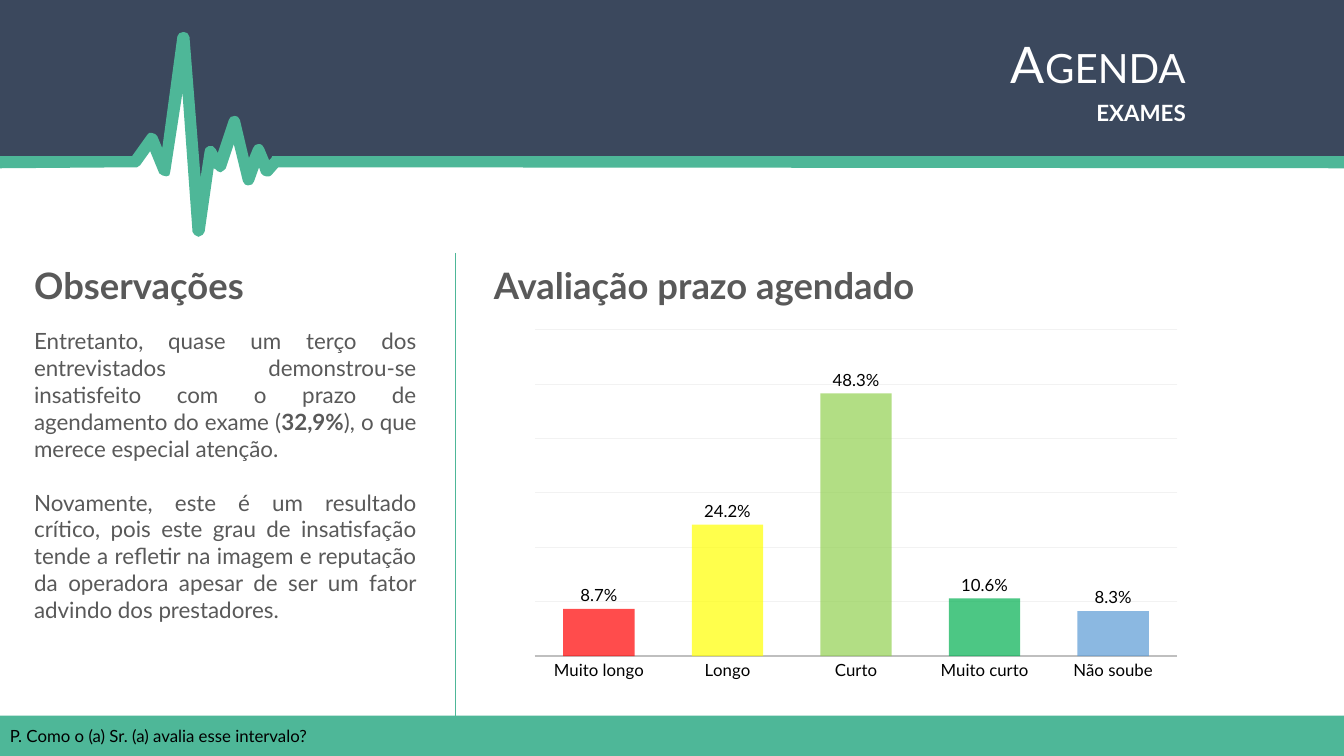
from dataclasses import dataclass

from lxml import etree
from pptx import Presentation
from pptx.chart.data import CategoryChartData
from pptx.dml.color import RGBColor
from pptx.enum.chart import XL_CHART_TYPE, XL_LABEL_POSITION, XL_TICK_MARK
from pptx.enum.dml import MSO_LINE
from pptx.enum.shapes import MSO_CONNECTOR, MSO_SHAPE
from pptx.enum.text import MSO_AUTO_SIZE, PP_ALIGN
from pptx.oxml.ns import qn
from pptx.shapes.autoshape import Shape
from pptx.slide import Slide
from pptx.util import Inches, Pt

COLUMN = XL_CHART_TYPE.COLUMN_CLUSTERED
OUTSIDE = XL_LABEL_POSITION.OUTSIDE_END
NO_TICK = XL_TICK_MARK.NONE
SOLID = MSO_LINE.SOLID
STRAIGHT = MSO_CONNECTOR.STRAIGHT
RECTANGLE = MSO_SHAPE.RECTANGLE
GROW = MSO_AUTO_SIZE.SHAPE_TO_FIT_TEXT
LEFT, RIGHT, JUSTIFY = PP_ALIGN.LEFT, PP_ALIGN.RIGHT, PP_ALIGN.JUSTIFY

NAVY = RGBColor(0x3B, 0x48, 0x5D)
GREEN = RGBColor(0x4E, 0xB7, 0x98)
WHITE = RGBColor(0xFF, 0xFF, 0xFF)
BLACK = RGBColor(0x00, 0x00, 0x00)
GREY = RGBColor(0x59, 0x59, 0x59)
AXIS_GREY = RGBColor(0xBF, 0xBF, 0xBF)
GRID_GREY = RGBColor(0xF2, 0xF2, 0xF2)
BAR_BLUE = RGBColor(0x5B, 0x9B, 0xD5)

FONT = "Lato"
SLIDE_WIDTH, SLIDE_HEIGHT = 13.33, 7.5

# Outline points in hundredths of an inch
HEADER_OUTLINE = [
    (1333, 0), (0, 0), (0, 161), (134, 160), (152, 141), (162, 167), (181, 74),
    (197, 204), (208, 155), (218, 165), (231, 126), (246, 176), (258, 153),
    (265, 169), (275, 160), (1333, 161),
]
PULSE_OUTLINE = [
    (1333, 155), (273, 155), (270, 155), (269, 157), (267, 159), (262, 147),
    (260, 144), (258, 143), (256, 143), (253, 144), (251, 147), (247, 157),
    (238, 119), (236, 116), (233, 115), (229, 116), (227, 119), (216, 152),
    (214, 148), (211, 145), (207, 145), (204, 147), (203, 150), (199, 176),
    (188, 37), (186, 33), (183, 32), (181, 32), (178, 33), (176, 36),
    (161, 147), (156, 135), (154, 133), (151, 132), (148, 132), (146, 134),
    (131, 155), (0, 155), (0, 167), (134, 166), (136, 166), (139, 164),
    (149, 150), (158, 172), (161, 174), (165, 175), (168, 174), (169, 170),
    (181, 92), (191, 230), (193, 233), (197, 235), (201, 233), (203, 230),
    (212, 167), (214, 168), (216, 170), (219, 171), (222, 169), (224, 167),
    (232, 143), (241, 180), (243, 183), (246, 184), (250, 183), (252, 180),
    (257, 166), (259, 172), (261, 174), (264, 175), (267, 175), (269, 174),
    (276, 166), (1333, 167),
]


@dataclass(frozen=True)
class Span:
    text: str
    size: int
    color: RGBColor
    bold: bool = False
    small_caps: bool = False


@dataclass(frozen=True)
class Para:
    spans: list[Span]
    align: PP_ALIGN = LEFT
    space_before: float = 0


@dataclass(frozen=True)
class TextBlock:
    left: float
    top: float
    width: float
    height: float
    paras: list[Para]


@dataclass(frozen=True)
class Bar:
    label: str
    value: float
    color: RGBColor


TEXT_BLOCKS = [
    TextBlock(2.46, 0.28, 9.4, 1.04, [
        Para([Span("Agenda", 36, WHITE, small_caps=True)], RIGHT),
        Para([Span("exames", 20, WHITE, True, True)], RIGHT),
    ]),
    TextBlock(0, 7.15, 9.56, 0.3, [
        Para([Span("P. Como o (a) Sr. (a) avalia esse intervalo?", 12, BLACK)]),
    ]),
    TextBlock(0.24, 2.56, 4.19, 0.54, [Para([Span("Observações", 26, GREY, True)])]),
    TextBlock(0.24, 3.2, 3.99, 2.79, [
        Para([
            Span("Entretanto, quase um terço dos entrevistados demonstrou-se "
                 "insatisfeito com o prazo de agendamento do exame (", 16, GREY),
            Span("32,9%", 16, GREY, True),
            Span("), o que merece especial atenção.", 16, GREY),
        ], JUSTIFY),
        Para([
            Span("Novamente, este é um resultado crítico, pois este grau de "
                 "insatisfação tende a refletir na imagem e reputação da operadora "
                 "apesar de ser um fator advindo dos prestadores.", 16, GREY),
        ], JUSTIFY, 19.2),
    ]),
    TextBlock(4.8, 2.56, 7.38, 0.54, [
        Para([Span("Avaliação prazo agendado", 26, GREY, True)]),
    ]),
]

BARS = [
    Bar("Muito longo", 0.087, RGBColor(0xFF, 0x00, 0x00)),
    Bar("Longo", 0.242, RGBColor(0xFF, 0xFF, 0x00)),
    Bar("Curto", 0.483, RGBColor(0x92, 0xD0, 0x50)),
    Bar("Muito curto", 0.106, RGBColor(0x00, 0xB0, 0x50)),
    Bar("Não soube", 0.083, BAR_BLUE),
]


def set_all(target: object, values: dict[str, object]) -> None:
    for name, value in values.items():
        setattr(target, name, value)


def fill_plain(shape: Shape, color: RGBColor) -> None:
    """Give a shape one solid colour, without line or shadow."""
    shape.shadow.inherit = False
    shape.fill.solid()
    shape.fill.fore_color.rgb = color
    shape.line.fill.background()


def add_outline(page: Slide, points: list[tuple[int, int]], color: RGBColor) -> None:
    builder = page.shapes.build_freeform(*points[0], scale=Inches(0.01))
    builder.add_line_segments(points[1:], close=True)
    fill_plain(builder.convert_to_shape(), color)


def add_text(page: Slide, block: TextBlock) -> None:
    box = page.shapes.add_textbox(
        Inches(block.left), Inches(block.top), Inches(block.width), Inches(block.height))
    frame = box.text_frame
    set_all(frame, {"word_wrap": True, "auto_size": GROW})
    for index, para in enumerate(block.paras):
        paragraph = frame.add_paragraph() if index else frame.paragraphs[0]
        paragraph.alignment = para.align
        if para.space_before:
            paragraph.space_before = Pt(para.space_before)
        for span in para.spans:
            run = paragraph.add_run()
            run.text = span.text
            set_all(run.font, {"name": FONT, "size": Pt(span.size), "bold": span.bold})
            run.font.color.rgb = span.color
            if span.small_caps:
                run.font._element.set("cap", "small")


def add_divider(page: Slide) -> None:
    line = page.shapes.add_connector(
        STRAIGHT, Inches(4.52), Inches(2.51), Inches(4.52), Inches(7.19))
    line.line.color.rgb = GREEN
    line.line.width = Pt(1)
    etree.SubElement(line._element.spPr, qn("a:effectLst"))


def add_rating_chart(page: Slide) -> None:
    data = CategoryChartData(number_format="0.0%")
    data.categories = [bar.label for bar in BARS]
    data.add_series("Series 1", [bar.value for bar in BARS])
    chart = page.shapes.add_chart(
        COLUMN, Inches(5.17), Inches(3.2), Inches(6.64), Inches(3.62), data).chart
    set_all(chart, {"has_legend": False, "has_title": False})
    plot = chart.plots[0]
    set_all(plot, {"gap_width": 80, "overlap": 25, "vary_by_categories": False,
                   "has_data_labels": True})
    labels = plot.data_labels
    set_all(labels, {"show_value": True, "number_format": "0.0%",
                     "number_format_is_linked": False, "position": OUTSIDE})

    categories, values = chart.category_axis, chart.value_axis
    set_all(categories, {"major_tick_mark": NO_TICK, "minor_tick_mark": NO_TICK})
    set_all(values, {"visible": False, "has_major_gridlines": True,
                     "minimum_scale": 0, "maximum_scale": 0.6, "major_unit": 0.1})
    set_all(values.tick_labels, {"number_format": "0.0%", "number_format_is_linked": False})
    for line, color, width in ((categories.format.line, AXIS_GREY, 1.25),
                               (values.major_gridlines.format.line, GRID_GREY, 0.75)):
        line.color.rgb = color
        set_all(line, {"width": Pt(width), "dash_style": SOLID})
    for font, size in ((chart.font, 10), (categories.tick_labels.font, 12), (labels.font, 12)):
        set_all(font, {"name": FONT, "size": Pt(size)})
        font.color.rgb = BLACK

    series = plot.series[0]
    fills = [series.format.fill] + [series.points[i].format.fill for i in range(len(BARS))]
    for fill, color in zip(fills, [BAR_BLUE] + [bar.color for bar in BARS]):
        fill.solid()
        fill.fore_color.rgb = color
    for color in list(series._element.iter(qn("a:srgbClr"))):
        etree.SubElement(color, qn("a:alpha"), val="70000")


def main() -> None:
    deck = Presentation()
    set_all(deck, {"slide_width": Inches(SLIDE_WIDTH), "slide_height": Inches(SLIDE_HEIGHT)})
    page = deck.slides.add_slide(deck.slide_layouts[6])
    add_outline(page, HEADER_OUTLINE, NAVY)
    add_outline(page, PULSE_OUTLINE, GREEN)
    footer = page.shapes.add_shape(
        RECTANGLE, 0, Inches(7.1), Inches(SLIDE_WIDTH), Inches(0.4))
    fill_plain(footer, GREEN)
    for block in TEXT_BLOCKS:
        add_text(page, block)
    add_divider(page)
    add_rating_chart(page)
    deck.save("out.pptx")


if __name__ == "__main__":
    main()
